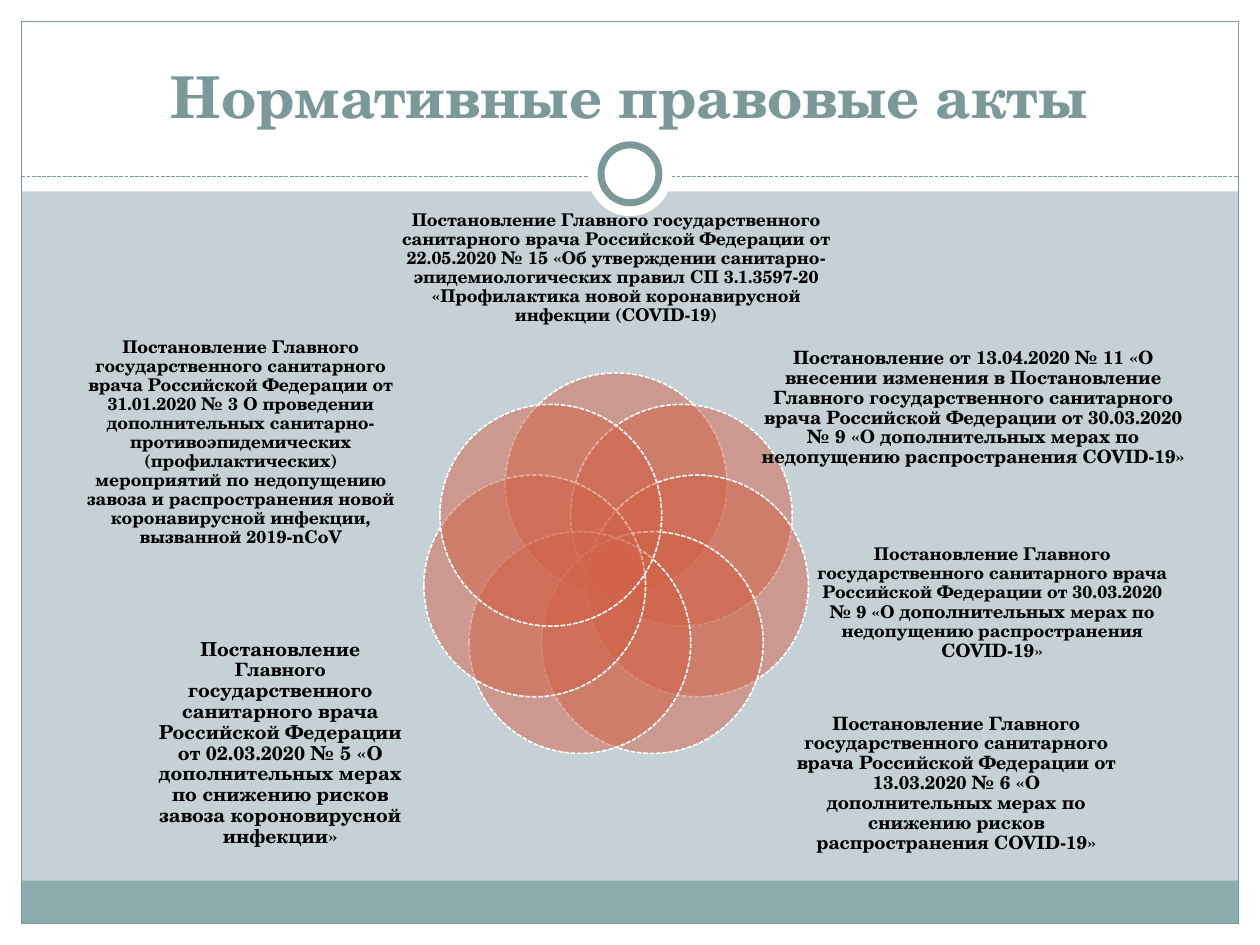
from dataclasses import dataclass
from math import cos, pi, sin

from lxml.etree import SubElement
from pptx import Presentation
from pptx.dml.color import RGBColor
from pptx.enum.dml import MSO_LINE
from pptx.enum.shapes import MSO_CONNECTOR, MSO_SHAPE
from pptx.enum.text import MSO_ANCHOR, PP_ALIGN
from pptx.oxml.ns import qn
from pptx.util import Inches, Pt


@dataclass(frozen=True)
class Theme:
    font: str = "TeX Gyre Schola"
    background: str = "C5D1D7"
    white: str = "FFFFFF"
    accent: str = "7C999A"
    footer: str = "8CADAE"
    petal: str = "D16349"
    ink: str = "000000"
    title_size: float = 33
    small: float = 10
    medium: float = 10.5
    large: float = 11


THEME = Theme()

ACTS = [
    ((3.06, 1.5, 3.66, 1.26), [
        ("Постановление Главного государственного санитарного врача Российской Федерации "
         "от 22.05.2020 № 15 «Об утверждении санитарно-эпидемиологических правил "
         "СП 3.1.3597-20 «Профилактика новой коронавирусной инфекции (COVID-19)", THEME.small)]),
    ((6, 2.4, 3.45, 1.68), [
        ("Постановление от 13.04.2020 № 11 «О внесении изменения в Постановление Главного "
         "государственного санитарного врача Российской Федерации от 30.03.2020 № 9 "
         "«О дополнительных мерах по недопущению распространения COVID-19»", THEME.medium)]),
    ((6.47, 4.21, 2.81, 1.16), [
        ("Постановление Главного государственного санитарного врача Российской Федерации "
         "от 30.03.2020 № 9 «О ", THEME.small),
        ("дополнительных", THEME.medium),
        (" мерах по недопущению распространения ", THEME.small),
        ("COVID-19", THEME.medium),
        ("»", THEME.small)]),
    ((6.25, 5.64, 2.68, 1.16), [
        ("Постановление Главного государственного санитарного врача Российской Федерации "
         "от 13.03.2020 № 6 «О дополнительных мерах по снижению рисков распространения "
         "COVID-19»", THEME.medium)]),
    ((1.22, 5.32, 2.01, 1.16), [
        ("Постановление ", THEME.large),
        ("Главного", THEME.medium),
        (" государственного санитарного врача Российской Федерации от 02.03.2020 № 5 "
         "«О дополнительных мерах по снижению рисков завоза короновирусной инфекции»",
         THEME.large)]),
    ((0.67, 2.26, 2.48, 2.51), [
        ("Постановление Главного государственного санитарного врача Российской Федерации "
         "от 31.01.2020 № 3 О проведении дополнительных санитарно-противоэпидемических "
         "(профилактических) мероприятий по недопущению завоза и распространения новой "
         "коронавирусной инфекции, вызванной 2019-nCoV", THEME.small)]),
]
PETAL_COUNT = 7


def apply_format(target, values):
    for attribute, value in values.items():
        setattr(target, attribute, value)


def style_line(line, color, width, dash=None):
    line.color.rgb = RGBColor.from_string(color)
    apply_format(line, {"width": Pt(width), "dash_style": dash})


def add_figure(slide, kind, box, fill=None, outline=None):
    figure = slide.shapes.add_shape(kind, *map(Inches, box))
    figure.shadow.inherit = False
    if fill:
        figure.fill.solid()
        figure.fill.fore_color.rgb = RGBColor.from_string(fill)
    else:
        figure.fill.background()
    if outline:
        style_line(figure.line, *outline)
    else:
        figure.line.fill.background()
    return figure


def add_label(slide, box, runs, color, anchor, spacing, margin=0):
    frame = slide.shapes.add_textbox(*map(Inches, box)).text_frame
    apply_format(frame, {
        "word_wrap": True, "vertical_anchor": anchor,
        "margin_left": Inches(margin), "margin_right": Inches(margin),
        "margin_top": Inches(margin / 2), "margin_bottom": Inches(margin / 2)})
    paragraph = frame.paragraphs[0]
    apply_format(paragraph, {"alignment": PP_ALIGN.CENTER, "line_spacing": spacing})
    for words, size in runs:
        run = paragraph.add_run()
        run.text = words
        apply_format(run.font, {"name": THEME.font, "size": Pt(size), "bold": True})
        run.font.color.rgb = RGBColor.from_string(color)


def draw_frame(slide, box):
    left, top, width, height = box
    edge, header, footer = 0.17, 1.52, 0.34
    right, bottom = left + width, top + height
    bands = [
        (left, bottom - edge, width, edge),
        (left, top, width, header),
        (left, top, edge, height),
        (right - edge, top, edge, height),
    ]
    for band in bands:
        add_figure(slide, MSO_SHAPE.RECTANGLE, band, THEME.white)
    inner = width - 2 * edge
    add_figure(slide, MSO_SHAPE.RECTANGLE,
               (left + edge, bottom - edge - footer, inner, footer), THEME.footer)
    add_figure(slide, MSO_SHAPE.RECTANGLE,
               (left + edge, top + edge, inner, height - 2 * edge),
               outline=(THEME.accent, 0.75))


def draw_header(slide, box):
    left, top, width, height = box
    rule_y = top + 1.4
    divider = slide.shapes.add_connector(
        MSO_CONNECTOR.STRAIGHT, Inches(left), Inches(rule_y),
        Inches(left + width), Inches(rule_y))
    style_line(divider.line, THEME.accent, 0.75, MSO_LINE.SQUARE_DOT)
    SubElement(divider._element.spPr, qn("a:effectLst"))
    center_x, center_y = left + width / 2, top + 1.38
    for diameter, outline in [(0.67, None), (0.46, (THEME.accent, 4))]:
        add_figure(slide, MSO_SHAPE.OVAL,
                   (center_x - diameter / 2, center_y - diameter / 2, diameter, diameter),
                   THEME.white, outline)
    add_label(slide, (left + 0.16, top + 0.25, width - 0.33, 0.83),
              [("Нормативные правовые акты", THEME.title_size)],
              THEME.accent, MSO_ANCHOR.BOTTOM, 1, margin=0.1)


def draw_petal(slide, box):
    petal = add_figure(slide, MSO_SHAPE.OVAL, box, THEME.petal,
                       (THEME.white, 0.9, MSO_LINE.SQUARE_DOT))
    color = petal._element.spPr.find(qn("a:solidFill"))[0]
    SubElement(color, qn("a:alpha"), val="50000")


def draw_flower(slide, box):
    left, top, width, height = box
    diameter = 1.76
    orbit = (height - diameter) / (1 + cos(pi / PETAL_COUNT))
    center_x, center_y = left + width / 2, top + diameter / 2 + orbit
    for index in range(PETAL_COUNT):
        angle = 2 * pi * index / PETAL_COUNT
        draw_petal(slide, (center_x + orbit * sin(angle) - diameter / 2,
                           center_y - orbit * cos(angle) - diameter / 2,
                           diameter, diameter))
    for label_box, runs in ACTS:
        add_label(slide, label_box, runs, THEME.ink, MSO_ANCHOR.MIDDLE, 0.9)


def main():
    deck = Presentation()
    apply_format(deck, {"slide_width": Inches(10), "slide_height": Inches(7.5)})
    slide = deck.slides.add_slide(deck.slide_layouts[6])
    slide.background.fill.solid()
    slide.background.fill.fore_color.rgb = RGBColor.from_string(THEME.background)
    draw_frame(slide, (0, 0, 10, 7.5))
    draw_header(slide, (0.17, 0, 9.66, 1.52))
    draw_flower(slide, (3.37, 2.96, 3.04, 3.02))
    deck.save("out.pptx")


if __name__ == "__main__":
    main()
